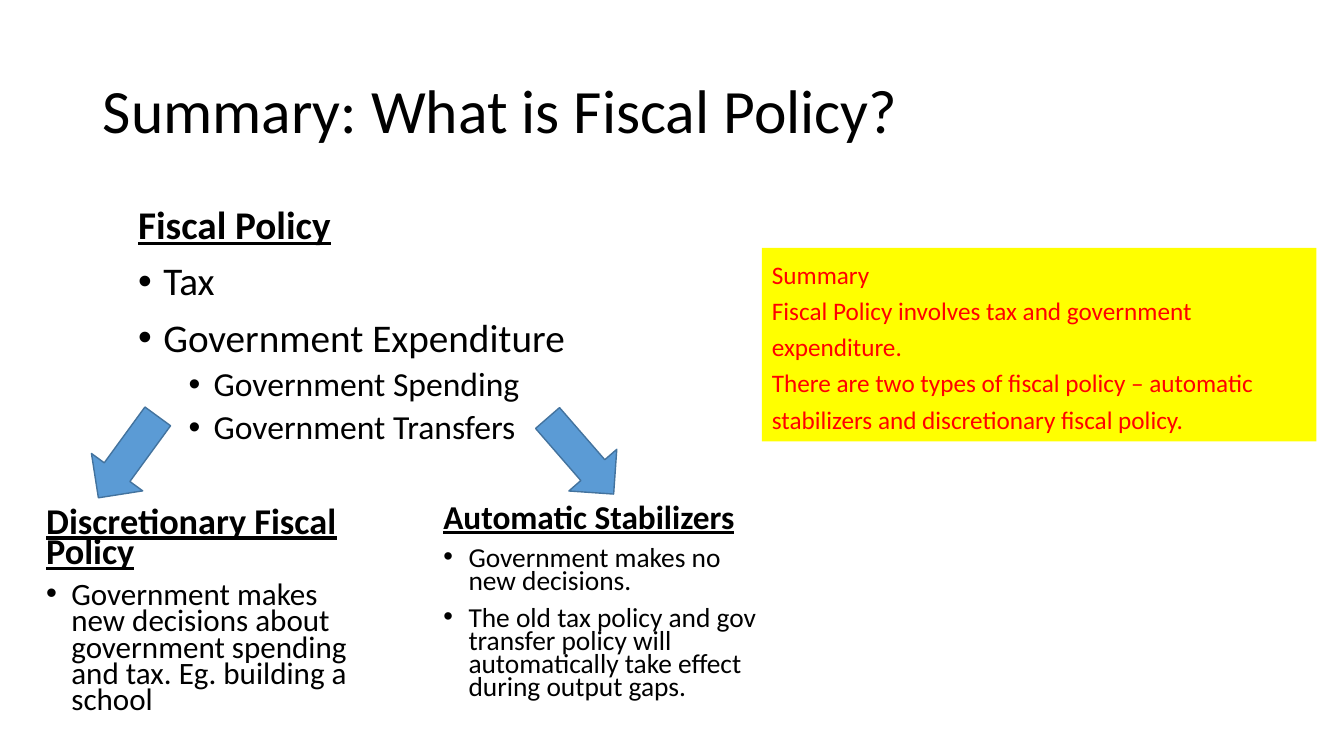
import dataclasses

import lxml.etree
import pptx
import pptx.dml.color
import pptx.enum.shapes
import pptx.enum.text
import pptx.oxml.ns
import pptx.util

Pt = pptx.util.Pt
AutoSize = pptx.enum.text.MSO_AUTO_SIZE
Anchor = pptx.enum.text.MSO_ANCHOR
ShapeKind = pptx.enum.shapes.MSO_SHAPE


@dataclasses.dataclass(frozen=True)
class Theme:
    font: str = "Calibri"
    ink: str = "000000"
    arrow_fill: str = "5B9BD5"
    arrow_line: str = "43739E"
    note_fill: str = "FFFF00"
    note_ink: str = "FF0000"
    title_size: float = 44
    body_size: float = 28
    detail_size: float = 24
    discretionary_sizes: tuple = (25.9, 22.2)
    automatic_sizes: tuple = (23.8, 19.6)
    note_size: float = 18


def color(value):
    return pptx.dml.color.RGBColor.from_string(value)


class SlideBuilder:
    def __init__(self, slide, theme):
        self.slide = slide
        self.theme = theme

    def place(self, shape, box):
        shape.left, shape.top, shape.width, shape.height = map(Pt, box)

    def format_frame(self, frame, anchor=Anchor.TOP, auto_size=AutoSize.NONE):
        frame.word_wrap = True
        frame.auto_size = auto_size
        frame.vertical_anchor = anchor

    def fill_paragraph(
        self, paragraph, text, size, spacing, ink=None, before=0, heading=False
    ):
        paragraph.text = text
        paragraph.alignment = pptx.enum.text.PP_ALIGN.LEFT
        paragraph.line_spacing = spacing
        paragraph.space_before = Pt(before)
        paragraph.space_after = Pt(0)
        font = paragraph.font
        font.name = self.theme.font
        font.size = Pt(size)
        font.bold = heading
        font.underline = heading
        font.color.rgb = color(ink or self.theme.ink)

    def set_bullet(self, paragraph, level):
        paragraph.level = level
        properties = paragraph._p.get_or_add_pPr()
        properties.set("marL", str(Pt(18 + 36 * level)))
        properties.set("indent", str(Pt(-18)))
        qualified = pptx.oxml.ns.qn
        lxml.etree.SubElement(properties, qualified("a:buFont"), typeface="Arial")
        lxml.etree.SubElement(properties, qualified("a:buChar"), char="•")

    def clear_bullet(self, paragraph):
        properties = paragraph._p.get_or_add_pPr()
        properties.set("marL", "0")
        properties.set("indent", "0")
        lxml.etree.SubElement(properties, pptx.oxml.ns.qn("a:buNone"))

    def title(self, text, box):
        shape = self.slide.shapes.title
        self.place(shape, box)
        self.format_frame(shape.text_frame, Anchor.MIDDLE)
        paragraph = shape.text_frame.paragraphs[0]
        self.fill_paragraph(paragraph, text, self.theme.title_size, 0.9)

    def headed_list(self, shape, heading, heading_size, items, spacing):
        frame = shape.text_frame
        self.format_frame(frame)
        first = frame.paragraphs[0]
        self.clear_bullet(first)
        self.fill_paragraph(first, heading, heading_size, spacing, heading=True)
        for text, level, size in items:
            paragraph = frame.add_paragraph()
            self.set_bullet(paragraph, level)
            before = 5 if level else 10
            self.fill_paragraph(paragraph, text, size, spacing, before=before)

    def body(self, heading, items, box):
        shape = self.slide.placeholders[1]
        self.place(shape, box)
        sizes = (self.theme.body_size, self.theme.detail_size)
        sized_items = [(text, level, sizes[level]) for text, level in items]
        self.headed_list(shape, heading, self.theme.body_size, sized_items, 0.9)

    def branch(self, heading, items, sizes, box):
        shape = self.slide.shapes.add_textbox(*map(Pt, box))
        heading_size, item_size = sizes
        sized_items = [(text, 0, item_size) for text in items]
        self.headed_list(shape, heading, heading_size, sized_items, 0.7)

    def filled_shape(self, kind, box, fill):
        shape = self.slide.shapes.add_shape(kind, *map(Pt, box))
        shape.shadow.inherit = False
        shape.fill.solid()
        shape.fill.fore_color.rgb = color(fill)
        return shape

    def arrow(self, left, top, rotation):
        box = (left, top, 72, 45.36)
        shape = self.filled_shape(ShapeKind.RIGHT_ARROW, box, self.theme.arrow_fill)
        shape.line.color.rgb = color(self.theme.arrow_line)
        shape.line.width = Pt(1)
        shape.rotation = rotation

    def note(self, lines, box):
        theme = self.theme
        shape = self.filled_shape(ShapeKind.RECTANGLE, box, theme.note_fill)
        shape.line.fill.background()
        frame = shape.text_frame
        self.format_frame(frame, auto_size=AutoSize.SHAPE_TO_FIT_TEXT)
        for index, text in enumerate(lines):
            paragraph = frame.add_paragraph() if index else frame.paragraphs[0]
            self.fill_paragraph(paragraph, text, theme.note_size, 1.2, theme.note_ink)


def main():
    presentation = pptx.Presentation()
    presentation.slide_width = Pt(960)
    presentation.slide_height = Pt(540)
    theme = Theme()
    slide = presentation.slides.add_slide(presentation.slide_layouts[1])
    builder = SlideBuilder(slide, theme)

    builder.title("Summary: What is Fiscal Policy?", (66.24, 28.8, 828, 104.4))
    builder.body(
        "Fiscal Policy",
        [
            ("Tax", 0),
            ("Government Expenditure", 0),
            ("Government Spending", 1),
            ("Government Transfers", 1),
        ],
        (91.44, 143.28, 388.8, 182.88),
    )
    builder.branch(
        "Discretionary Fiscal Policy",
        [
            "Government makes new decisions about government spending and tax. "
            "Eg. building a school"
        ],
        theme.discretionary_sizes,
        (25.92, 360.72, 246.96, 159.84),
    )
    builder.branch(
        "Automatic Stabilizers",
        [
            "Government makes no new decisions.",
            "The old tax policy and gov transfer policy will automatically take "
            "effect during output gaps.",
        ],
        theme.automatic_sizes,
        (309.6, 358.56, 246.96, 159.84),
    )
    builder.arrow(55.44, 303.84, 126.1)
    builder.arrow(378.72, 303.12, 49)
    builder.note(
        [
            "Summary",
            "Fiscal Policy involves tax and government expenditure.",
            "There are two types of fiscal policy – automatic stabilizers and "
            "discretionary fiscal policy.",
        ],
        (544.32, 177.12, 396, 138.24),
    )
    presentation.save("out.pptx")


if __name__ == "__main__":
    main()
